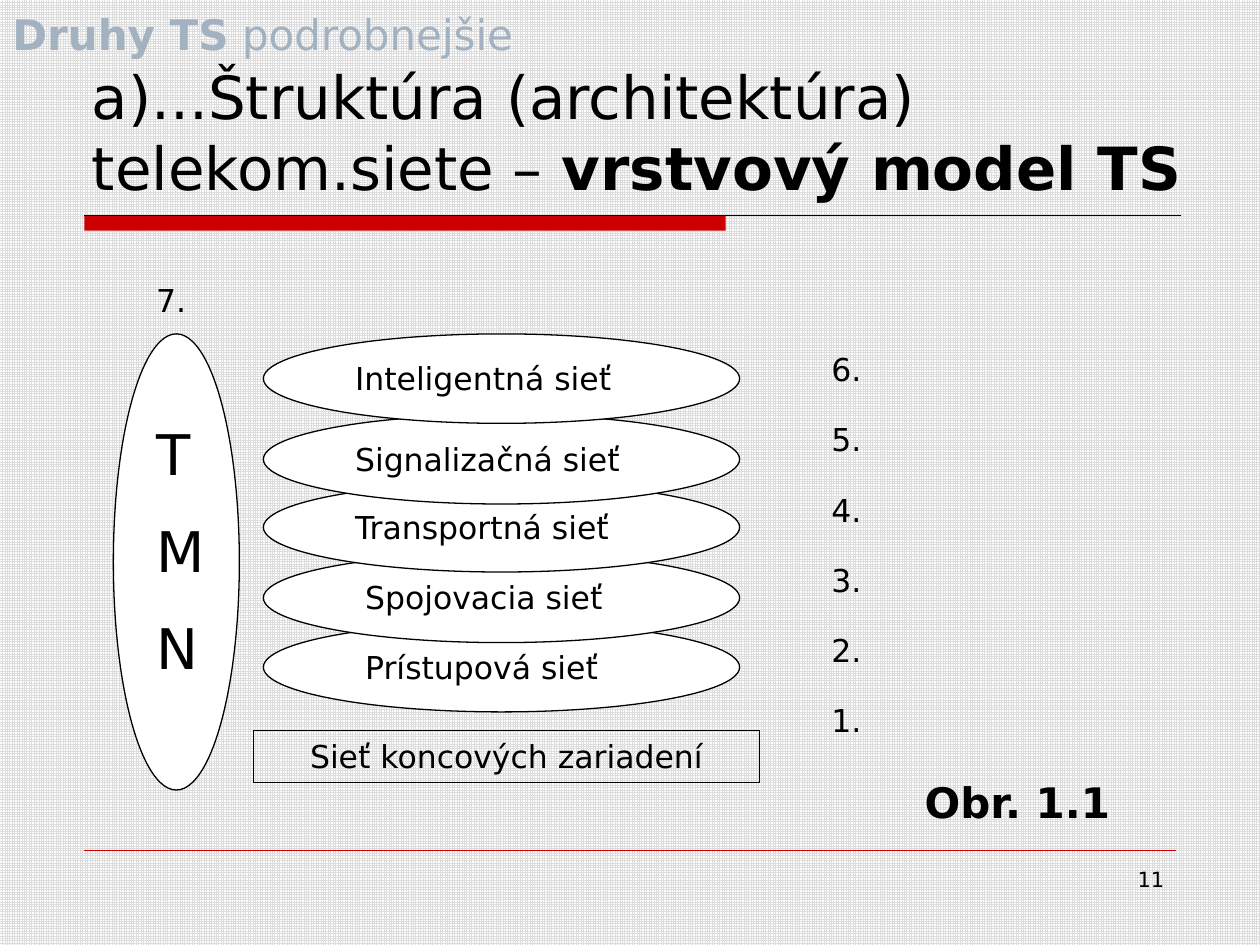
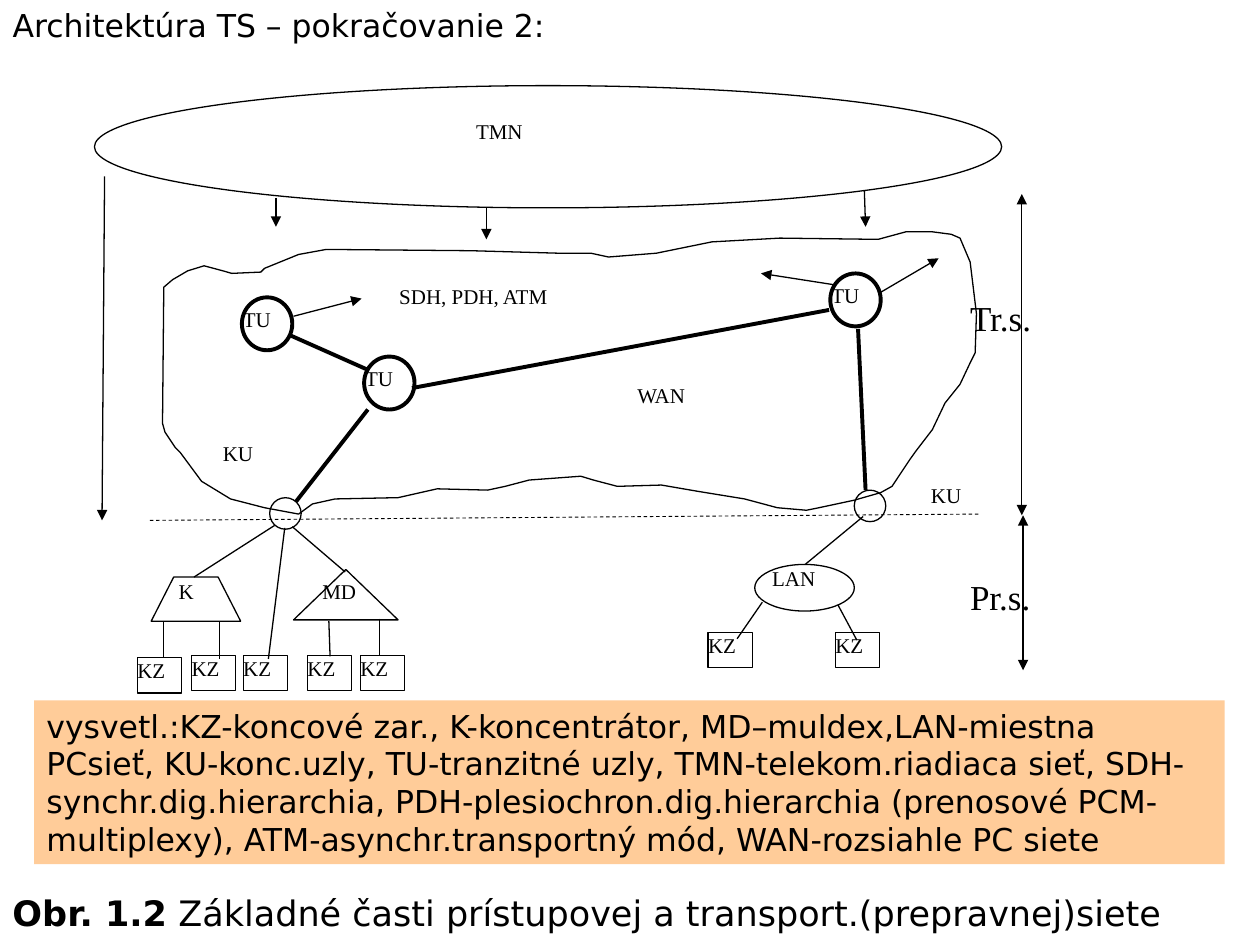
from lxml import etree
from pptx import Presentation
from pptx.dml.color import RGBColor
from pptx.enum.dml import MSO_LINE, MSO_PATTERN
from pptx.enum.shapes import MSO_CONNECTOR, MSO_SHAPE
from pptx.enum.text import MSO_ANCHOR, MSO_AUTO_SIZE, PP_ALIGN
from pptx.oxml.ns import qn
from pptx.util import Inches, Pt

ELLIPSE, RECTANGLE = MSO_SHAPE.OVAL, MSO_SHAPE.RECTANGLE
TRIANGLE, TRAPEZOID = MSO_SHAPE.ISOSCELES_TRIANGLE, MSO_SHAPE.TRAPEZOID
LEFT, CENTER, RIGHT = PP_ALIGN.LEFT, PP_ALIGN.CENTER, PP_ALIGN.RIGHT
TOP, BOTTOM = MSO_ANCHOR.TOP, MSO_ANCHOR.BOTTOM
TITLE_ONLY = 5

COLORS = {"ink": "000000", "paper": "FFFFFF", "grid": "DDDDDD",
          "accent": "CC0000", "faded": "A3B2C1", "note": "FFCC99"}
SANS, SERIF = "DejaVu Sans", "Times New Roman"
THIN, THICK = 0.75, 2.25

# Layer model: text is a list of paragraphs, each a list of (text, bold) runs
MODEL_TITLE = [[("a)...Štruktúra (architektúra) telekom.siete – ", False),
                ("vrstvový model TS", True)]]
MODEL_TOPIC = [[("Druhy TS", True), (" podrobnejšie", False)]]
# name, top of the ellipse, left of the label; from the bottom layer up
LAYERS = [
    ("Prístupová sieť", 4.94, 2.8),
    ("Spojovacia sieť", 4.39, 2.8),
    ("Transportná sieť", 3.83, 2.72),
    ("Signalizačná sieť", 3.29, 2.72),
    ("Inteligentná sieť", 2.65, 2.72),
]

# Network diagram
NETWORK_TITLE = "Architektúra TS – pokračovanie 2:"
LEGEND = (
    "vysvetl.:KZ-koncové zar., K-koncentrátor, MD–muldex,LAN-miestna PCsieť, "
    "KU-konc.uzly, TU-tranzitné uzly, TMN-telekom.riadiaca sieť, "
    "SDH-synchr.dig.hierarchia, PDH-plesiochron.dig.hierarchia (prenosové "
    "PCM-multiplexy), ATM-asynchr.transportný mód, WAN-rozsiahle PC siete")
CAPTION = [[("Obr. 1.2", True),
            (" Základné časti prístupovej a transport.(prepravnej)siete", False)]]

# Outline of the wide area network, in hundredths of an inch
CLOUD = [
    (130, 228), (137, 222), (149, 215), (162, 211), (177, 215), (184, 217),
    (207, 216), (210, 213), (237, 202), (259, 198), (374, 199), (443, 201),
    (469, 201), (483, 204), (521, 201), (565, 192), (619, 189), (697, 190),
    (719, 184), (740, 184), (755, 186), (762, 189), (770, 208), (775, 249),
    (774, 280), (770, 288), (762, 305), (750, 320), (740, 341), (727, 358),
    (722, 365), (714, 377), (708, 386), (699, 391), (678, 397), (650, 403),
    (640, 405), (617, 403), (591, 396), (554, 390), (525, 385), (490, 386),
    (471, 381), (461, 378), (420, 381), (401, 386), (387, 389), (347, 388),
    (316, 395), (266, 396), (248, 400), (237, 408), (210, 403), (183, 396),
    (160, 382), (143, 359), (139, 355), (131, 343), (129, 336), (130, 231),
]
TRANSIT_NODES = [(2.89, 2.83), (1.92, 2.36), (6.59, 2.17)]
END_NODES = [(2.14, 3.95), (6.78, 3.89)]
TERMINALS = [(1.09, 5.22), (1.52, 5.2), (1.93, 5.2), (2.44, 5.2), (2.86, 5.2),
             (5.62, 5.02), (6.63, 5.02)]
# text, left, top, width, size
LABELS = [
    ("TMN", 3.68, 0.89, 0.87, 12), ("SDH, PDH, ATM", 3.07, 2.2, 2.18, 12),
    ("WAN", 4.96, 2.99, 0.87, 12), ("KU", 1.67, 3.45, 0.67, 12),
    ("KU", 7.29, 3.78, 0.67, 12), ("K", 1.32, 4.54, 0.49, 12),
    ("MD", 2.46, 4.54, 0.67, 12), ("LAN", 6.03, 4.44, 0.86, 12),
    ("Pr.s.", 7.6, 4.52, 0.79, 20), ("Tr.s.", 7.6, 2.3, 0.79, 20),
]
# x and y of the start, x and y of the end
TRUNKS = [(2.3, 2.66, 2.93, 2.94), (3.27, 3.08, 6.58, 2.46),
          (6.81, 2.61, 6.87, 3.89), (2.35, 3.98, 2.92, 3.25)]
ARROWS = [
    (2.19, 1.57, 2.19, 1.8), (3.86, 1.65, 3.86, 1.9), (6.86, 1.51, 6.87, 1.8),
    (0.83, 1.4, 0.81, 4.13), (2.33, 2.51, 2.87, 2.37),
    (6.62, 2.26, 6.04, 2.17), (6.99, 2.32, 7.45, 2.05),
]
SPANS = [(8.11, 1.54, 8.11, 4.09), (8.12, 4.09, 8.12, 5.32)]
ACCESS_LINES = [
    (1.3, 4.93, 1.3, 5.22), (1.74, 4.93, 1.74, 5.23), (2.26, 4.19, 2.13, 5.23),
    (2.18, 4.17, 1.54, 4.58), (2.32, 4.18, 2.74, 4.54),
    (6.85, 4.1, 6.39, 4.48), (2.61, 4.93, 2.62, 5.21), (3.01, 4.91, 3.01, 5.2),
    (6.05, 4.78, 5.85, 5.07), (6.65, 4.8, 6.8, 5.08),
]
BORDER = (1.19, 4.13, 7.77, 4.08)


def color(name):
    return RGBColor.from_string(COLORS[name])


def write(shape, text, size, font=SANS, ink="ink", align=LEFT, anchor=TOP,
          gap=0, inset=None):
    """Fill a shape with a string or with paragraphs of (text, bold) runs."""
    paragraphs = [[(text, False)]] if isinstance(text, str) else text
    frame = shape.text_frame
    frame.word_wrap = True
    frame.auto_size = MSO_AUTO_SIZE.NONE
    frame.vertical_anchor = anchor
    if inset is not None:
        frame.margin_left = frame.margin_right = Inches(inset)
        frame.margin_top = frame.margin_bottom = Inches(inset)
    for index, runs in enumerate(paragraphs):
        paragraph = frame.add_paragraph() if index else frame.paragraphs[0]
        paragraph.alignment = align
        paragraph.space_before = Pt(gap if index else 0)
        paragraph.font.size = Pt(size)
        paragraph.font.name = font
        paragraph.font.color.rgb = color(ink)
        for words, bold in runs:
            run = paragraph.add_run()
            run.text = words
            run.font.bold = bold


def add_text(slide, box, text, size, **style):
    shape = slide.shapes.add_textbox(*map(Inches, box))
    write(shape, text, size, **style)


def set_title(slide, box, text, size, **style):
    title = slide.shapes.title
    title.left, title.top, title.width, title.height = map(Inches, box)
    write(title, text, size, **style)


def paint(shape, fill, line, weight):
    shape.shadow.inherit = False
    if fill:
        shape.fill.solid()
        shape.fill.fore_color.rgb = color(fill)
    else:
        shape.fill.background()
    if line:
        shape.line.color.rgb = color(line)
        shape.line.width = Pt(weight)
    else:
        shape.line.fill.background()
    return shape


def add_shape(slide, kind, box, fill=None, line="ink", weight=THIN):
    return paint(slide.shapes.add_shape(kind, *map(Inches, box)),
                 fill, line, weight)


def add_line(slide, ends, weight=THIN, ink="ink", dash=None, arrows=()):
    """Draw a straight line; arrows names the ends that get a head."""
    connector = slide.shapes.add_connector(MSO_CONNECTOR.STRAIGHT,
                                           *map(Inches, ends))
    connector.line.color.rgb = color(ink)
    connector.line.width = Pt(weight)
    if dash:
        connector.line.dash_style = dash
    properties = connector._element.spPr
    for end in arrows:
        etree.SubElement(properties.find(qn("a:ln")), qn("a:" + end),
                         type="triangle")
    etree.SubElement(properties, qn("a:effectLst"))


def add_slide(presentation):
    return presentation.slides.add_slide(
        presentation.slide_layouts[TITLE_ONLY])


def build_layer_model(presentation):
    slide = add_slide(presentation)
    background = slide.background.fill
    background.patterned()
    background.pattern = MSO_PATTERN.SMALL_GRID
    background.fore_color.rgb = color("grid")
    background.back_color.rgb = color("paper")

    add_shape(slide, RECTANGLE, (0.67, 1.71, 5.09, 0.12), "accent", None)
    add_line(slide, (0.67, 1.71, 9.37, 1.71))
    add_line(slide, (0.67, 6.75, 9.33, 6.75), 0.25, "accent")
    add_text(slide, (7.17, 6.83, 2.17, 0.52), "11", 12, align=RIGHT)
    set_title(slide, (0.63, 0.33, 9.1, 1.33), MODEL_TITLE, 34, anchor=BOTTOM)
    add_text(slide, (0, 0, 4.29, 0.52), MODEL_TOPIC, 24, ink="faded",
             anchor=BOTTOM)

    add_shape(slide, ELLIPSE, (0.9, 2.65, 1, 3.62), "paper")
    add_text(slide, (1.14, 3.28, 0.47, 2.23),
             [[(letter, False)] for letter in "TMN"], 32, gap=17)
    add_text(slide, (1.14, 2.18, 0.55, 0.4), "7.", 18)
    for name, top, label_left in LAYERS:
        add_shape(slide, ELLIPSE, (2.09, top, 3.78, 0.71), "paper")
        add_text(slide, (label_left, top + 0.15, 3.23, 0.4), name, 18)
    terminals = add_shape(slide, RECTANGLE, (2.01, 5.8, 4.02, 0.41))
    write(terminals, "Sieť koncových zariadení", 18, align=CENTER)
    add_text(slide, (6.5, 2.73, 0.63, 3.4),
             [[(f"{number}.", False)] for number in range(6, 0, -1)], 18,
             gap=18.5)
    add_text(slide, (7.24, 6.11, 1.85, 0.5), [[("Obr. 1.1", True)]], 24)


def build_network(presentation):
    slide = add_slide(presentation)
    set_title(slide, (0, 0, 4.76, 0.4), NETWORK_TITLE, 18)

    outline = slide.shapes.build_freeform(*CLOUD[0], scale=Inches(0.01))
    outline.add_line_segments(CLOUD[1:], close=True)
    paint(outline.convert_to_shape(), "paper", "ink", THIN)
    add_shape(slide, ELLIPSE, (0.75, 0.68, 7.2, 0.97), "paper")

    for left, top in TRANSIT_NODES:
        add_shape(slide, ELLIPSE, (left, top, 0.4, 0.42), weight=THICK)
        add_text(slide, (left - 0.09, top + 0.02, 0.67, 0.49), "TU", 12,
                 font=SERIF)
    for left, top in END_NODES:
        add_shape(slide, ELLIPSE, (left, top, 0.25, 0.25))

    concentrator = add_shape(slide, TRAPEZOID, (1.2, 4.58, 0.71, 0.35), "paper")
    concentrator.adjustments[0] = 0.51
    add_shape(slide, TRIANGLE, (2.33, 4.52, 0.83, 0.4), "paper")
    add_shape(slide, ELLIPSE, (5.99, 4.48, 0.79, 0.37), "paper")
    for left, top in TERMINALS:
        terminal = add_shape(slide, RECTANGLE, (left, top, 0.35, 0.28))
        write(terminal, "KZ", 12, font=SERIF, inset=0)

    for ends in TRUNKS:
        add_line(slide, ends, THICK)
    for ends in ACCESS_LINES:
        add_line(slide, ends)
    for ends in ARROWS:
        add_line(slide, ends, arrows=["tailEnd"])
    for ends in SPANS:
        add_line(slide, ends, arrows=["headEnd", "tailEnd"])
    add_line(slide, BORDER, 0.5, dash=MSO_LINE.DASH)
    for text, left, top, width, size in LABELS:
        add_text(slide, (left, top, width, 0.45), text, size, font=SERIF)

    legend = add_shape(slide, RECTANGLE, (0.27, 5.56, 9.45, 1.3), "note", None)
    write(legend, LEGEND, 18)
    add_text(slide, (0, 7.03, 10, 0.45), CAPTION, 20)


def main():
    presentation = Presentation()
    presentation.slide_width, presentation.slide_height = Inches(10), Inches(7.5)
    build_layer_model(presentation)
    build_network(presentation)
    presentation.save("out.pptx")


if __name__ == "__main__":
    main()
